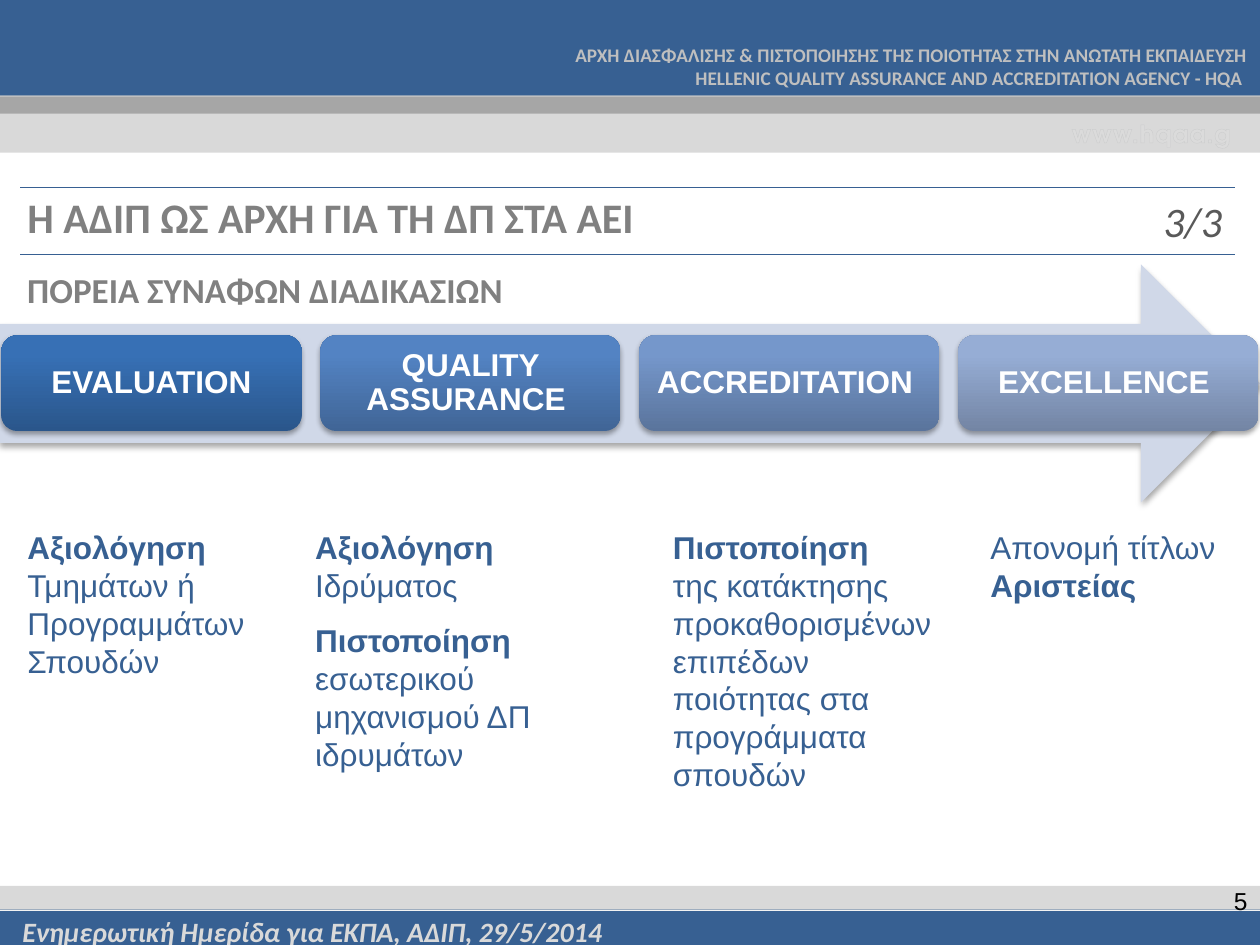
from copy import deepcopy

from lxml import etree
from pptx import Presentation
from pptx import util as u
from pptx.dml.color import RGBColor
from pptx.enum import shapes, text
from pptx.oxml import parse_xml
from pptx.oxml.ns import nsdecls, qn

BLUE = RGBColor(0x37, 0x60, 0x92)
WHITE = RGBColor(0xFF, 0xFF, 0xFF)
BLACK = RGBColor(0x00, 0x00, 0x00)
PALE = RGBColor(0xF2, 0xF2, 0xF2)
LIGHT = RGBColor(0xD9, 0xD9, 0xD9)
SILVER = RGBColor(0xBF, 0xBF, 0xBF)
MID = RGBColor(0xA6, 0xA6, 0xA6)
GREY = RGBColor(0x80, 0x80, 0x80)
DARK = RGBColor(0x59, 0x59, 0x59)
ARROW = RGBColor(0xD0, 0xD8, 0xE8)

LEFT, CENTER, RIGHT = (text.PP_ALIGN.LEFT, text.PP_ALIGN.CENTER,
                       text.PP_ALIGN.RIGHT)
TOP, MIDDLE, BOTTOM = (text.MSO_ANCHOR.TOP, text.MSO_ANCHOR.MIDDLE,
                       text.MSO_ANCHOR.BOTTOM)
KIND = shapes.MSO_SHAPE

SHADOW = (f'<a:effectLst {nsdecls("a")}><a:outerShdw blurRad="39370" '
          'dist="22860" dir="5400000" rotWithShape="0"><a:srgbClr val="000000">'
          '<a:alpha val="35000"/></a:srgbClr></a:outerShdw></a:effectLst>')
OUTLINE = (f'<a:ln {nsdecls("a")} w="13462"><a:solidFill><a:srgbClr val="101A26">'
           '<a:alpha val="6000"/></a:srgbClr></a:solidFill></a:ln>')

# Process steps: label, dark and light end of the gradient
STEPS = [
    ("EVALUATION", "2A568B", "3770B5"),
    ("QUALITY ASSURANCE ", "406596", "5383C3"),
    ("ACCREDITATION ", "5A749C", "7597CB"),
    ("EXCELLENCE ", "7385A4", "96ADD5"),
]

# Columns: place in cm, paragraphs of (text, bold) runs; None breaks the line
COLUMNS = [
    ((0.3, 10.52, 5.21, 3.33),
     [[("Αξιολόγηση", True), (" Τμημάτων ή Προγραμμάτων Σπουδών", False)]]),
    ((6.1, 10.52, 6.5, 5.23),
     [[("Αξιολόγηση ", True), ("Ιδρύματος", False)],
      [("Πιστοποίηση ", True), ("εσωτερικού μηχανισμού ΔΠ ιδρυμάτων", False)]]),
    ((13.31, 10.52, 6.2, 5.64),
     [[("Πιστοποίηση", True), None,
       ("της κατάκτησης προκαθορισμένων επιπέδων ποιότητας στα "
        "προγράμματα σπουδών", False)]]),
    ((19.71, 10.52, 5.41, 1.8),
     [[("Απονομή τίτλων ", False), ("Αριστείας", True)]]),
]


def style(item, form):
    for name, value in form.items():
        setattr(item, name, value)


def place(shape, spot):
    style(shape, dict(zip(("left", "top", "width", "height"), map(u.Cm, spot))))


def write(shape, paras, size, color, face="Calibri", bold=False, italic=False,
          align=LEFT, anchor=TOP, gap=0, line=1.0):
    frame = shape.text_frame
    style(frame, {"word_wrap": True, "vertical_anchor": anchor,
                  "auto_size": text.MSO_AUTO_SIZE.NONE})
    for i, runs in enumerate(paras):
        para = frame.paragraphs[0] if i == 0 else frame.add_paragraph()
        style(para, {"alignment": align, "line_spacing": line,
                     "space_before": u.Pt(gap if i else 0)})
        for piece in [(runs, bold)] if isinstance(runs, str) else runs:
            if piece is None:
                para.add_line_break()
                para._p[-1].insert(0, deepcopy(run._r.rPr))
                continue
            run = para.add_run()
            run.text = piece[0]
            style(run.font, {"size": u.Pt(size), "name": face,
                             "bold": piece[1], "italic": italic})
            run.font.color.rgb = color
    return frame


def block(slide, kind, spot, fill=None):
    shape = slide.shapes.add_shape(kind, *map(u.Cm, spot))
    shape.shadow.inherit = False
    shape.line.fill.background()
    if fill is not None:
        shape.fill.solid()
        shape.fill.fore_color.rgb = fill
    return shape


def shade(shape):
    props = shape._element.spPr
    props.remove(props.find(qn("a:effectLst")))
    props.append(parse_xml(SHADOW))


def rule(slide, x, y, end, color, width):
    line = slide.shapes.add_connector(
        shapes.MSO_CONNECTOR.STRAIGHT, *map(u.Cm, (x, y, end, y)))
    line.line.color.rgb = color
    line.line.width = u.Pt(width)
    etree.SubElement(line._element.spPr, qn("a:effectLst"))


def label(slide, spot, words, size, color, **form):
    box = slide.shapes.add_textbox(*map(u.Cm, spot))
    write(box, [words], size, color, **form)


def step(slide, i, words, dark, light):
    box = block(slide, KIND.ROUNDED_RECTANGLE, (0.03 + 6.43 * i, 6.76, 6.05, 1.93))
    box.fill.gradient()
    box.fill.gradient_angle = 90
    for stop, tone, spot in zip(box.fill.gradient_stops, (dark, light), (0, 0.8)):
        stop.color.rgb = RGBColor.from_string(tone)
        stop.position = spot
    shade(box)
    frame = write(box, [words], 18, WHITE, "Arial", bold=True, align=CENTER,
                  anchor=MIDDLE, line=0.9)
    for side in ("left", "top", "right", "bottom"):
        setattr(frame, f"margin_{side}", u.Cm(0.18))


def column(holder, spot, paras):
    place(holder, spot)
    frame = write(holder, paras, 18, BLUE, "Arial", gap=10)
    for para in frame.paragraphs:
        props = para._p.get_or_add_pPr()
        props.set("marL", "0")
        props.set("indent", "0")
        etree.SubElement(props, qn("a:buNone"))


def bands(slide):
    head, _, site, _, _ = [
        block(slide, KIND.RECTANGLE, (0, y, 25.4, high), fill)
        for y, high, fill in [(0, 1.93, BLUE), (1.93, 0.38, MID),
                              (2.29, 0.79, LIGHT), (17.86, 0.5, LIGHT),
                              (18.34, 0.78, BLUE)]]
    write(head, ["ΑΡΧΗ ΔΙΑΣΦΑΛΙΣΗΣ & ΠΙΣΤΟΠΟΙΗΣΗΣ ΤΗΣ ΠΟΙΟΤΗΤΑΣ ΣΤΗΝ "
                 "ΑΝΩΤΑΤΗ ΕΚΠΑΙΔΕΥΣΗ",
                 "HELLENIC QUALITY ASSURANCE AND ACCREDITATION AGENCY - HQA "],
          11, SILVER, bold=True, align=RIGHT, anchor=BOTTOM)
    frame = write(site, ["www.hqaa.gr "], 14, WHITE, "TeX Gyre Adventor",
                  bold=True, align=RIGHT, anchor=MIDDLE)
    props = frame.paragraphs[0].runs[0]._r.get_or_add_rPr()
    props.set("spc", "50")
    props.insert(0, parse_xml(OUTLINE))
    for y in (3.78, 5.13):
        rule(slide, 0.41, y, 24.89, BLUE, 1)
    for y, color in ((1.93, SILVER), (2.31, LIGHT), (18.34, PALE)):
        rule(slide, 0, y, 25.4, color, 0.25)


def main():
    deck = Presentation()
    deck.slide_width, deck.slide_height = u.Cm(25.4), u.Cm(19.05)
    slide = deck.slides.add_slide(deck.slide_layouts.get_by_name("Comparison"))
    title, *bodies = slide.placeholders

    # Header, footer and rules
    bands(slide)

    # Title, page count and subtitle
    place(title, (0.3, 3.73, 25.1, 1.27))
    write(title, ["Η ΑΔΙΠ ΩΣ ΑΡΧΗ ΓΙΑ ΤΗ ΔΠ ΣΤΑ ΑΕΙ"], 24, GREY, bold=True)
    label(slide, (21.49, 3.81, 3.4, 1.27), "3/3", 24, DARK, italic=True,
          align=RIGHT)

    # Process arrow with its steps
    shade(block(slide, KIND.RIGHT_ARROW, (0, 5.33, 25.4, 4.8), ARROW))
    for i, item in enumerate(STEPS):
        step(slide, i, *item)
    label(slide, (0.3, 5.28, 25.1, 1.12), "ΠΟΡΕΙΑ ΣΥΝΑΦΩΝ ΔΙΑΔΙΚΑΣΙΩΝ", 20, GREY,
          bold=True)

    # Explanations under the steps
    for holder, item in zip(bodies, COLUMNS):
        column(holder, *item)

    # Slide number and event
    label(slide, (19.48, 17.73, 5.92, 1.32), "5", 14, BLACK, face="Arial",
          align=RIGHT)
    label(slide, (0.2, 18.31, 25.2, 0.94),
          "Ενημερωτική Ημερίδα για ΕΚΠΑ, ΑΔΙΠ, 29/5/2014", 16, LIGHT,
          bold=True, italic=True)
    deck.save("out.pptx")


if __name__ == "__main__":
    main()
